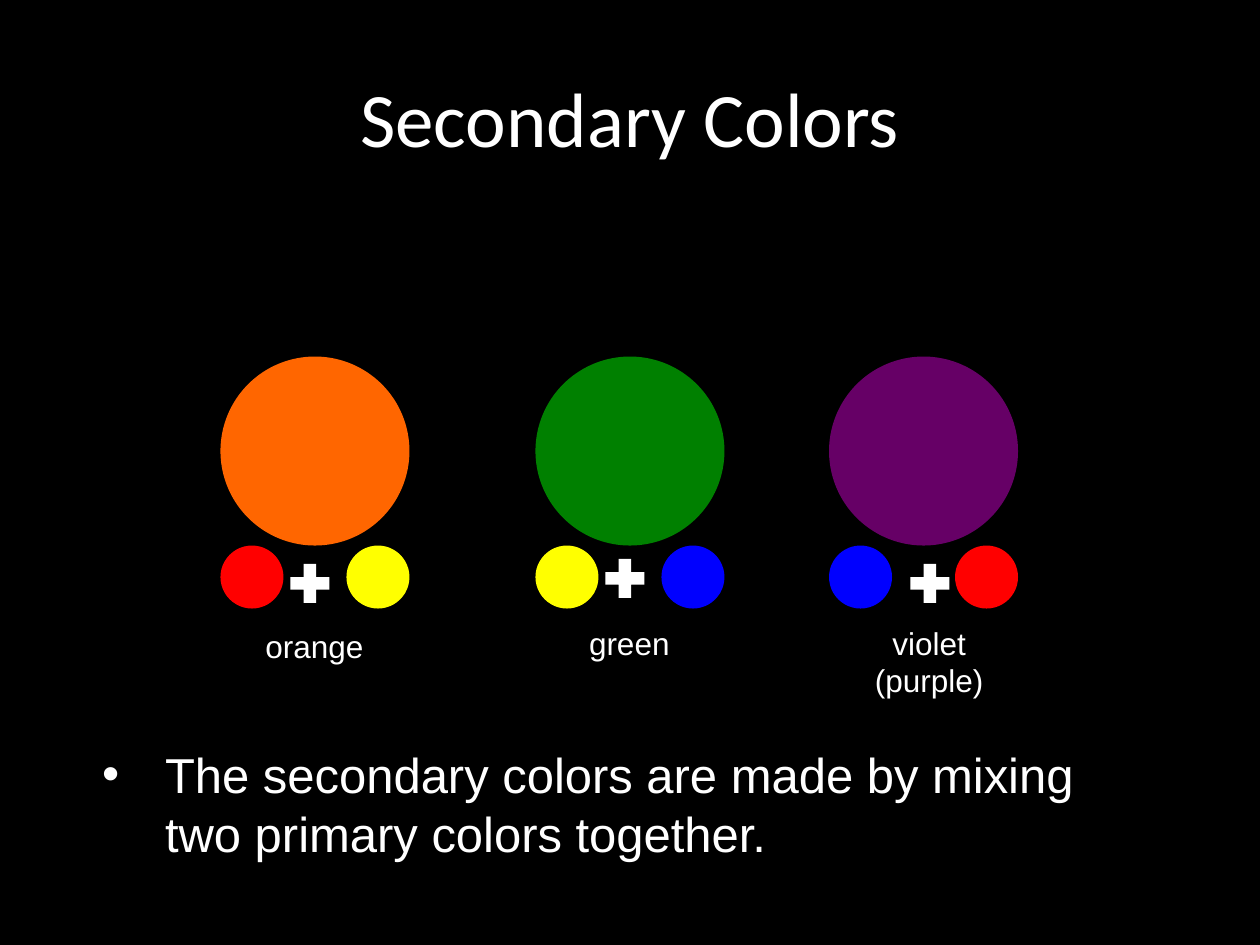
from pptx import Presentation
from pptx.dml.color import RGBColor
from pptx.enum import shapes, text
from pptx.util import Inches, Pt

HUES = {
    "black": "000000", "white": "FFFFFF", "red": "FF0000",
    "yellow": "FFFF00", "blue": "0000FF", "orange": "FF6600",
    "green": "008000", "violet": "660066",
}
BIG, SMALL, PLUS = 1.5, 0.5, 0.42
TOP = 2.83
ROW = TOP + BIG

# mix, left edge, two parts, plus place, label place, label lines
MIXES = [
    ("orange", 1.75, ("red", "yellow"), (2.25, 4.42), (1.83, 4.93), ["orange"]),
    ("green", 4.25, ("yellow", "blue"), (4.75, 4.38), (4.33, 4.9), ["green"]),
    ("violet", 6.58, ("blue", "red"), (7.17, 4.42), (6.71, 4.9),
     ["violet", "(purple)"]),
]


def draw(kind, left, top, size, hue):
    """Add a square-framed shape with a plain fill."""
    form = slide.shapes.add_shape(
        kind, Inches(left), Inches(top), Inches(size), Inches(size))
    form.shadow.inherit = False
    form.fill.solid()
    form.fill.fore_color.rgb = RGBColor.from_string(HUES[hue])
    form.line.fill.background()


def write(box, place, lines, size, face, align):
    """Place a text holder and fill it with white paragraphs."""
    box.left, box.top, box.width, box.height = map(Inches, place)
    frame = box.text_frame
    frame.text = "\n".join(lines)
    frame.word_wrap = True
    frame.auto_size = text.MSO_AUTO_SIZE.NONE
    for para in frame.paragraphs:
        para.alignment = align
        para.space_before = Pt(0)
        look = {"size": Pt(size), "name": face}
        for key, value in look.items():
            setattr(para.runs[0].font, key, value)
        para.runs[0].font.color.rgb = RGBColor.from_string(HUES["white"])


deck = Presentation()
deck.slide_width, deck.slide_height = Inches(10), Inches(7.5)
slide = deck.slides.add_slide(deck.slide_layouts[1])
slide.background.fill.solid()
slide.background.fill.fore_color.rgb = RGBColor.from_string(HUES["black"])

center, left = text.PP_ALIGN.CENTER, text.PP_ALIGN.LEFT
title, body = slide.placeholders
write(title, (0.5, 0.3, 9, 1.25), ["Secondary Colors"], 44, "Calibri", center)
title.text_frame.vertical_anchor = text.MSO_ANCHOR.MIDDLE

oval, plus = shapes.MSO_SHAPE.OVAL, shapes.MSO_SHAPE.MATH_PLUS
for mix, edge, parts, sign, label, lines in MIXES:
    draw(oval, edge, TOP, BIG, mix)
    for i, part in enumerate(parts):
        draw(oval, edge + i * (BIG - SMALL), ROW, SMALL, part)
    draw(plus, *sign, PLUS, "white")
    box = slide.shapes.add_textbox(0, 0, 0, 0)
    tall = 0.42 + 0.29 * (len(lines) - 1)
    write(box, (*label, 1.33, tall), lines, 18, "Arial", center)

write(body, (0.71, 5.86, 8.58, 1.04),
      ["The secondary colors are made by mixing two primary colors together."],
      28, "Arial", left)
props = body.text_frame.paragraphs[0]._p.get_or_add_pPr()
props.set("marL", str(Inches(0.5)))
props.set("indent", str(Inches(-0.5)))

deck.save("out.pptx")
